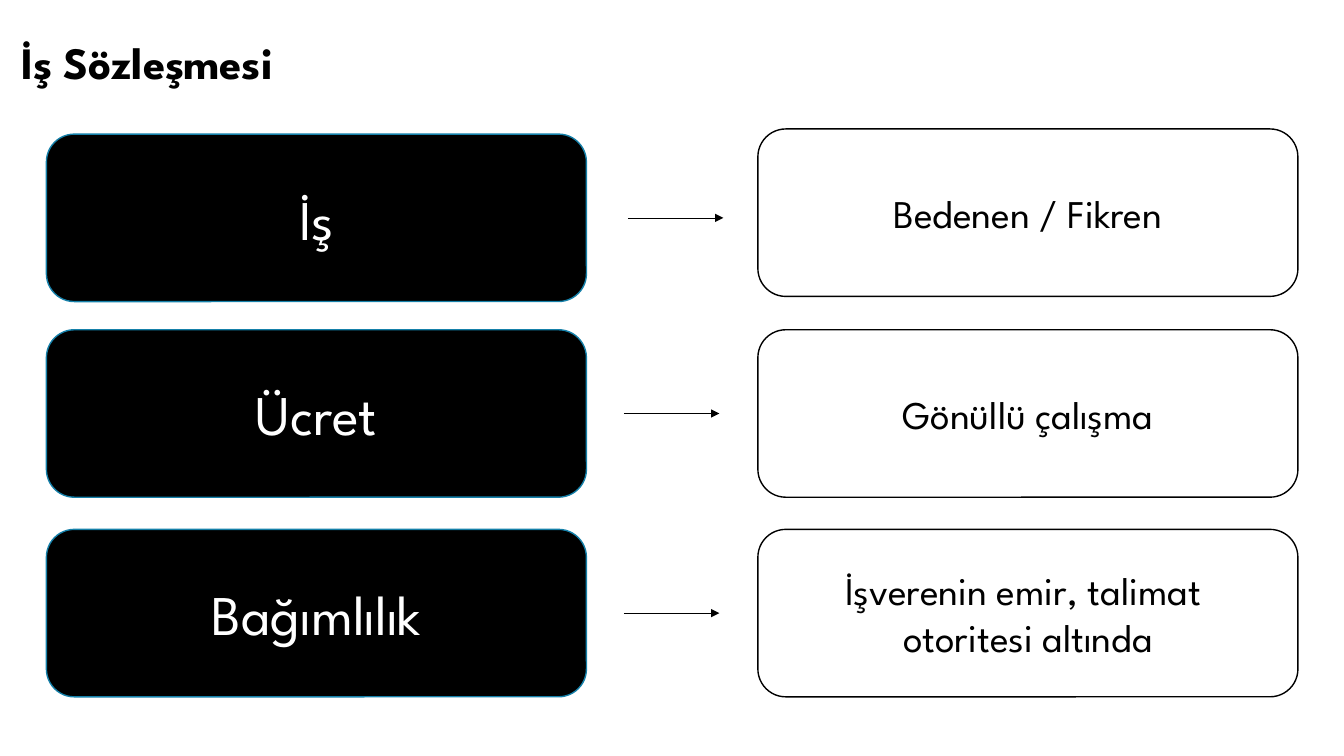
from lxml import etree
from pptx import Presentation
from pptx.dml.color import RGBColor
from pptx.enum.shapes import MSO_CONNECTOR, MSO_SHAPE
from pptx.enum.text import MSO_ANCHOR, PP_ALIGN
from pptx.oxml.ns import qn
from pptx.util import Cm, Pt

BLACK = RGBColor(0x00, 0x00, 0x00)
WHITE = RGBColor(0xFF, 0xFF, 0xFF)
BLUE = RGBColor(0x15, 0x80, 0xA9)
FONT = "League Spartan"

BOX_WIDTH, BOX_HEIGHT = 13.61, 4.22
ELEMENT_LEFT, MEANING_LEFT = 1.17, 19.1
ARROW_LENGTH = 2.41

# element, its meaning, top of each box, start of the arrow
ROWS = [
    ("İş", "Bedenen / Fikren", 3.38, 3.25, 15.82),
    ("Ücret", "Gönüllü çalışma", 8.31, 8.31, 15.72),
    ("Bağımlılık", "İşverenin emir, talimat  otoritesi altında", 13.34, 13.34, 15.72),
]


def write_text(shape, text, size, color, bold=False):
    frame = shape.text_frame
    frame.word_wrap = True
    frame.vertical_anchor = MSO_ANCHOR.MIDDLE
    frame.text = text
    font = frame.paragraphs[0].runs[0].font
    font.name, font.size, font.bold = FONT, Pt(size), bold
    font.color.rgb = color


def add_box(left, top, text, size, fill, outline, text_color):
    box = slide.shapes.add_shape(
        MSO_SHAPE.ROUNDED_RECTANGLE, Cm(left), Cm(top), Cm(BOX_WIDTH), Cm(BOX_HEIGHT))
    box.shadow.inherit = False
    box.fill.solid()
    box.fill.fore_color.rgb = fill
    box.line.color.rgb = outline
    box.line.width = Pt(1)
    write_text(box, text, size, text_color)
    box.text_frame.paragraphs[0].alignment = PP_ALIGN.CENTER


prs = Presentation()
prs.slide_width, prs.slide_height = Cm(33.87), Cm(19.05)
slide = prs.slides.add_slide(prs.slide_layouts[6])

title = slide.shapes.add_textbox(Cm(0.3), Cm(-0.2), Cm(29.21), Cm(3.68))
write_text(title, "İş Sözleşmesi", 32, BLACK, bold=True)
title.text_frame.paragraphs[0].line_spacing = 0.9

for element, meaning, element_top, meaning_top, arrow_left in ROWS:
    add_box(ELEMENT_LEFT, element_top, element, 40, BLACK, BLUE, WHITE)
    add_box(MEANING_LEFT, meaning_top, meaning, 28, WHITE, BLACK, BLACK)

    middle = Cm(element_top + BOX_HEIGHT / 2)
    arrow = slide.shapes.add_connector(
        MSO_CONNECTOR.STRAIGHT, Cm(arrow_left), middle, Cm(arrow_left + ARROW_LENGTH), middle)
    arrow.line.color.rgb = BLACK
    arrow.line.width = Pt(0.5)
    etree.SubElement(arrow.line._get_or_add_ln(), qn("a:tailEnd"), type="triangle")
    etree.SubElement(arrow._element.spPr, qn("a:effectLst"))

prs.save("out.pptx")
